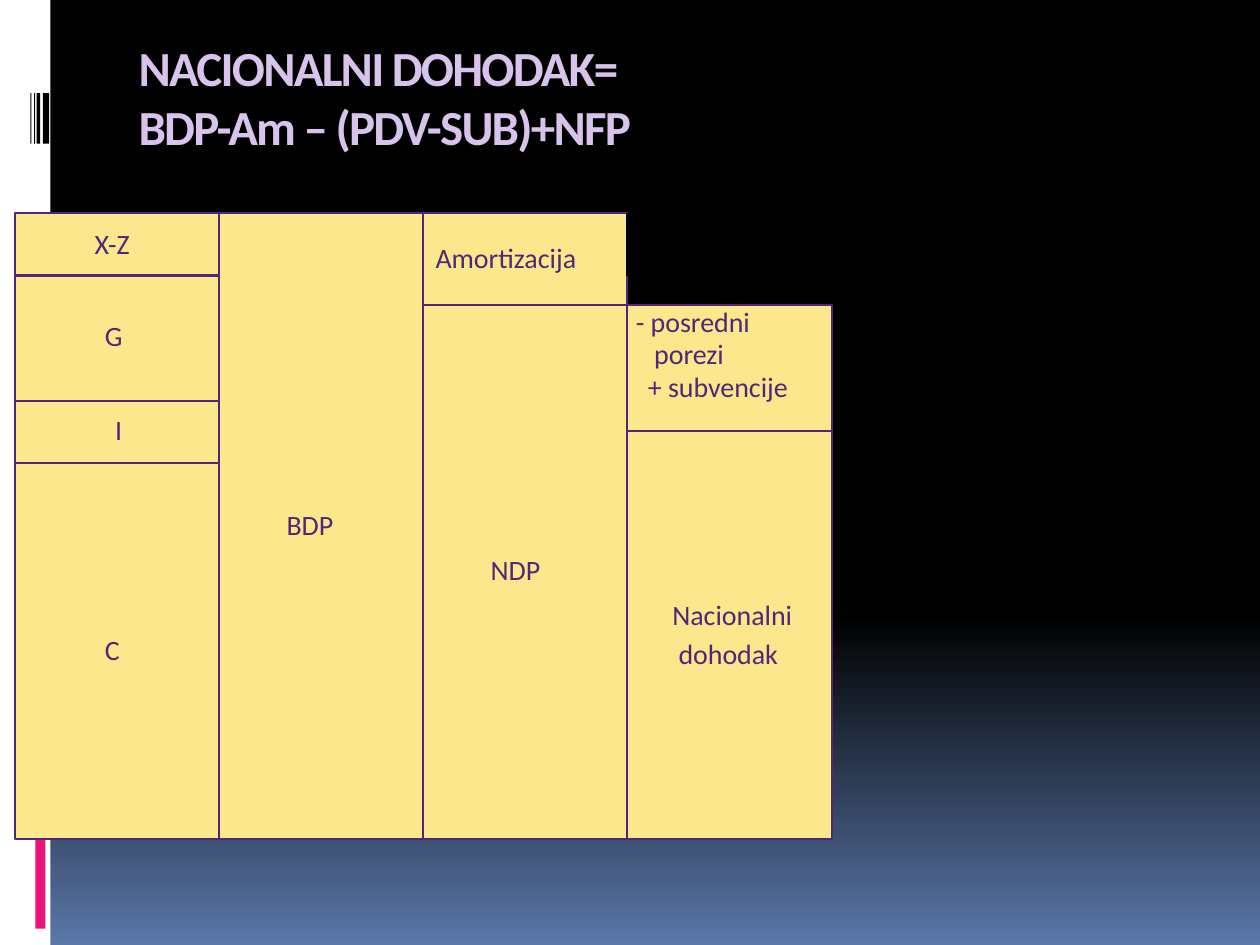
from pptx import Presentation
from pptx.dml.color import RGBColor
from pptx.enum.shapes import MSO_CONNECTOR, MSO_SHAPE
from pptx.enum.text import MSO_ANCHOR, MSO_AUTO_SIZE, PP_ALIGN
from pptx.oxml.ns import qn
from pptx.util import Inches, Pt
from lxml.etree import SubElement

COLORS = {"black": "000000", "blue": "5A77A9", "white": "FFFFFF", "pink": "EA157A",
          "lilac": "D7C3EB", "purple": "502878", "yellow": "FCE78C"}
# Origin and pitch of the account grid, in inches
LEFT, TOP, COLUMN, ROW = 0.12, 1.69, 1.62, 0.497


def color(name):
    return RGBColor.from_string(COLORS[name])


def set_all(target, values):
    for name, value in values.items():
        setattr(target, name, value)


class SlideBuilder:
    FRAME = {"margin_left": 0, "margin_right": 0, "margin_top": 0, "margin_bottom": 0,
             "word_wrap": False, "auto_size": MSO_AUTO_SIZE.SHAPE_TO_FIT_TEXT}
    LABEL_FONT = {"name": "Calibri", "size": Pt(16)}
    TITLE_FONT = {"name": "Calibri", "size": Pt(28), "bold": True}

    def __init__(self, presentation):
        self.slide = presentation.slides.add_slide(presentation.slide_layouts[5])
        self.shapes = self.slide.shapes

    def point(self, column, row):
        return Inches(LEFT + column * COLUMN), Inches(TOP + row * ROW)

    def background(self, start, end, start_position):
        fill = self.slide.background.fill
        fill.gradient()
        fill.gradient_angle = 270
        for stop, name, position in zip(fill.gradient_stops, (start, end), (start_position, 1)):
            stop.color.rgb = color(name)
            stop.position = position

    def title(self, lines, box):
        title = self.shapes.title
        set_all(title, dict(zip(("left", "top", "width", "height"), map(Inches, box))))
        frame = title.text_frame
        set_all(frame, {"vertical_anchor": MSO_ANCHOR.TOP, "word_wrap": True,
                        "auto_size": MSO_AUTO_SIZE.NONE})
        paragraph = frame.paragraphs[0]
        paragraph.alignment = PP_ALIGN.LEFT
        paragraph.text = "\v".join(lines)
        for run in paragraph.runs:
            set_all(run.font, self.TITLE_FONT)
            run.font.color.rgb = color("lilac")
            run._r.get_or_add_rPr().set("spc", "-100")

    def rectangle(self, left, top, width, height, fill, line=None):
        shape = self.shapes.add_shape(MSO_SHAPE.RECTANGLE, left, top, width, height)
        shape.shadow.inherit = False
        shape.fill.solid()
        shape.fill.fore_color.rgb = color(fill)
        if line:
            shape.line.color.rgb = color(line)
            shape.line.width = Pt(1.13)
        else:
            shape.line.fill.background()

    def cell(self, column, first_row, last_row):
        left, top = self.point(column, first_row)
        self.rectangle(left, top, Inches(COLUMN), Inches((last_row - first_row) * ROW),
                       "yellow", "purple")

    def label(self, lines, column, row, columns):
        left, top = self.point(column, row)
        box = self.shapes.add_textbox(left, top, Inches(columns * COLUMN),
                                      Inches(0.27 * len(lines)))
        frame = box.text_frame
        set_all(frame, self.FRAME)
        for index, line in enumerate(lines):
            paragraph = frame.add_paragraph() if index else frame.paragraphs[0]
            run = paragraph.add_run()
            run.text = line
            set_all(run.font, self.LABEL_FONT)
            run.font.color.rgb = color("purple")

    def hairline(self, column, first_row, last_row):
        line = self.shapes.add_connector(MSO_CONNECTOR.STRAIGHT, *self.point(column, first_row),
                                         *self.point(column, last_row))
        line.line.color.rgb = color("black")
        line.line.width = Pt(0)
        SubElement(line._element.spPr, qn("a:effectLst"))


# Side band, pink accent and bars, in inches
DECORATION = [
    (0, 0, 0.4, 7.5, "white"),
    (0.28, 5.52, 0.08, 1.85, "pink"),
    (0.34, 0.74, 0.05, 0.4, "black"),
    (0.29, 0.74, 0.03, 0.4, "black"),
    (0.27, 0.74, 0.01, 0.4, "black"),
    (0.24, 0.74, 0.01, 0.4, "black"),
]
# Column, first row, last row, then labels: lines, column, row, width in columns
CELLS = [
    (3, 3.48, 10, [(["Nacionalni"], 3.22, 6.14, 0.64), (["dohodak"], 3.25, 6.76, 0.53)]),
    (2, 1.47, 10, [(["NDP"], 2.33, 5.43, 0.29)]),
    (1, 0, 10, [(["BDP"], 1.33, 4.71, 0.28)]),
    (0, 4, 10, [(["C"], 0.44, 6.7, 0.1)]),
    (2, 0, 1.47, [(["Amortizacija"], 2.06, 0.44, 0.75)]),
    (0, 3, 4, [(["I"], 0.49, 3.18, 0.04)]),
    (0, 1, 3, [(["G"], 0.44, 1.69, 0.11)]),
    (0, 0, 1, [(["X-Z"], 0.39, 0.22, 0.22)]),
    (3, 1.47, 3.48, [([" - posredni"], 3.01, 1.47, 0.65),
                     ([" porezi", "+ subvencije"], 3.1, 1.97, 0.77)]),
]


def main():
    presentation = Presentation()
    set_all(presentation, {"slide_width": Inches(10), "slide_height": Inches(7.5)})
    builder = SlideBuilder(presentation)

    # Backdrop
    builder.background("black", "blue", 0.65)
    for *box, fill in DECORATION:
        builder.rectangle(*map(Inches, box), fill)

    # Heading
    builder.title(["NACIONALNI DOHODAK= ", "BDP-Am – (PDV-SUB)+NFP"], (1, 0.25, 8.5, 1))

    # Account columns
    for column, first_row, last_row, labels in CELLS:
        builder.cell(column, first_row, last_row)
        for label in labels:
            builder.label(*label)

    # Edge beside depreciation
    builder.hairline(3, 0, 1)

    presentation.save("out.pptx")


if __name__ == "__main__":
    main()
